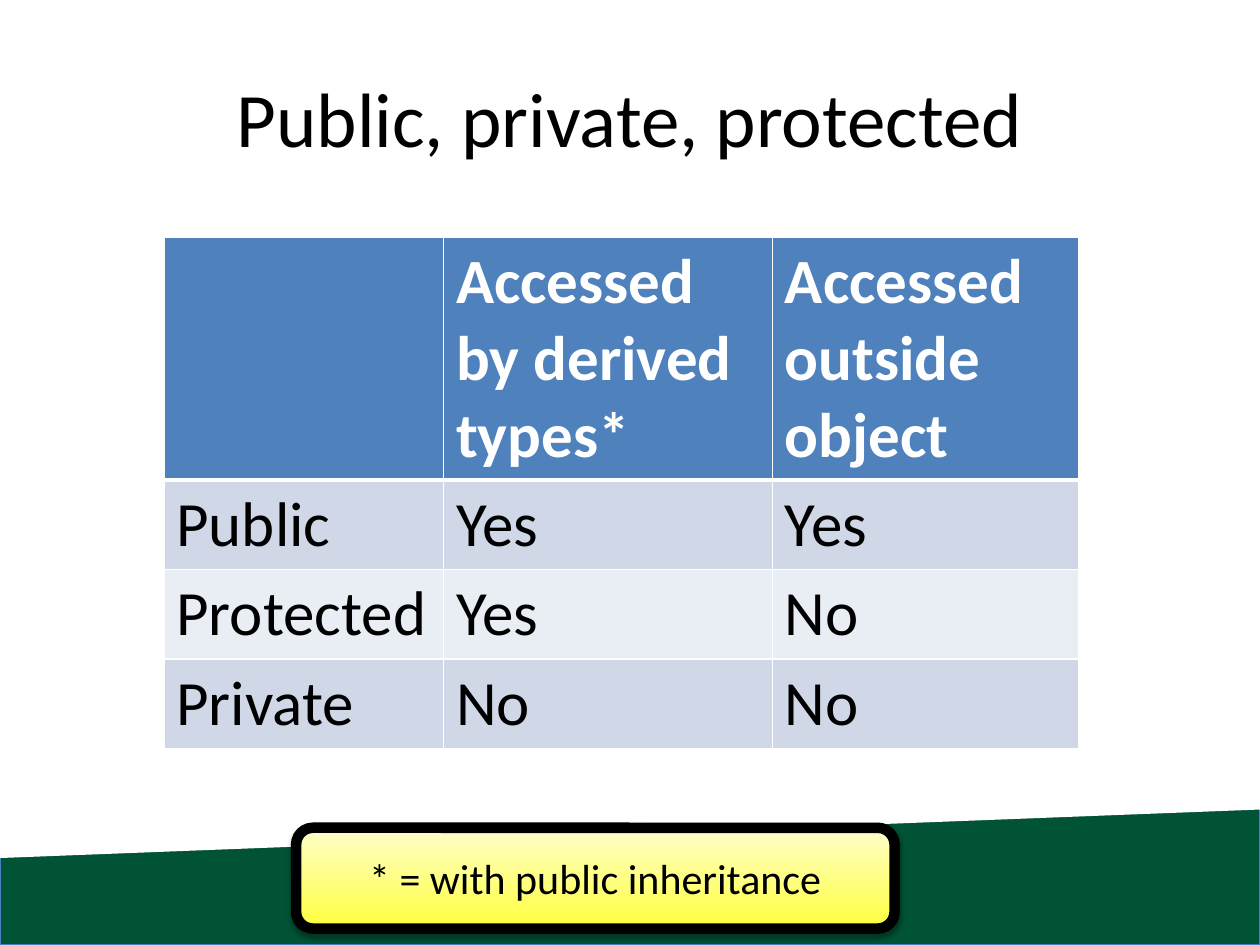
from dataclasses import dataclass
from typing import Any

from lxml.etree import SubElement
from pptx import Presentation
from pptx.dml.color import RGBColor
from pptx.enum.shapes import MSO_SHAPE as Preset
from pptx.enum.text import MSO_ANCHOR as Anchor, PP_ALIGN as Align
from pptx.oxml.ns import qn
from pptx.util import Inches, Pt

BLACK, WHITE = "000000", "FFFFFF"
GREEN, BLUE = "005334", "4F81BD"
BANDS = ["D0D8E8", "E9EDF4"]


def color(value):
    return RGBColor.from_string(value)


def add_color(parent, value):
    """Append a solid colour element and return it."""
    return SubElement(parent, qn("a:srgbClr"), val=value)


@dataclass
class SlideWriter:
    page: Any
    font: str = "Calibri"

    def text(self, frame, words, size, ink=BLACK, bold=False, align=Align.LEFT):
        frame.word_wrap = True
        para = frame.paragraphs[0]
        para.alignment = align
        span = para.add_run()
        span.text = words
        span.font.name = self.font
        span.font.size = Pt(size)
        span.font.bold = bold
        span.font.color.rgb = color(ink)

    def title(self, words, left, top, width, height):
        box = self.page.shapes.add_textbox(
            Inches(left), Inches(top), Inches(width), Inches(height))
        box.text_frame.vertical_anchor = Anchor.MIDDLE
        self.text(box.text_frame, words, 44, align=Align.CENTER)

    def shape(self, preset, left, top, width, height, fill=None, line=None, weight=0.75):
        shape = self.page.shapes.add_shape(
            preset, Inches(left), Inches(top), Inches(width), Inches(height))
        shape.shadow.inherit = False
        if fill:
            shape.fill.solid()
            shape.fill.fore_color.rgb = color(fill)
        if line:
            shape.line.color.rgb = color(line)
            shape.line.width = Pt(weight)
        else:
            shape.line.fill.background()
        return shape

    def soft_shadow(self, shape):
        effects = shape._element.spPr.find(qn("a:effectLst"))
        shadow = SubElement(
            effects, qn("a:outerShdw"), blurRad=str(Pt(3.1)), dist=str(Pt(1.8)),
            dir="5400000", rotWithShape="0")
        SubElement(add_color(shadow, BLACK), qn("a:alpha"), val="35000")

    def note(self, words, left, top, width, height):
        note = self.shape(Preset.ROUNDED_RECTANGLE, left, top, width, height,
                          line=BLACK, weight=6)
        note.fill.gradient()
        note.fill.gradient_angle = 90
        for stop, shade in zip(note.fill.gradient_stops, ["FFFF3E", "FFFFCA"]):
            stop.color.rgb = color(shade)
        self.soft_shadow(note)
        note.text_frame.vertical_anchor = Anchor.MIDDLE
        self.text(note.text_frame, words, 24, align=Align.CENTER)

    def borders(self, cell, top, bottom):
        props = cell._tc.get_or_add_tcPr()
        for side, weight in zip("LRTB", [1, 1, top, bottom]):
            line = SubElement(props, qn(f"a:ln{side}"), w=str(Pt(weight)))
            add_color(SubElement(line, qn("a:solidFill")), WHITE)

    def table(self, rows, left, top, widths, heights):
        table = self.page.shapes.add_table(
            len(rows), len(widths), Inches(left), Inches(top),
            Inches(sum(widths)), Inches(sum(heights))).table
        for column, width in zip(table.columns, widths):
            column.width = Inches(width)
        for r, (row, height) in enumerate(zip(rows, heights)):
            table.rows[r].height = Inches(height)
            header = r == 0
            for c, words in enumerate(row):
                cell = table.cell(r, c)
                self.borders(cell, 3 if r == 1 else 1, 3 if header else 1)
                cell.fill.solid()
                cell.fill.fore_color.rgb = color(BLUE if header else BANDS[(r - 1) % 2])
                if words:
                    self.text(cell.text_frame, words, 36,
                              WHITE if header else BLACK, header)


def main():
    deck = Presentation()
    deck.slide_width, deck.slide_height = Inches(10), Inches(7.5)
    writer = SlideWriter(deck.slides.add_slide(deck.slide_layouts[6]))

    ground = writer.shape(Preset.RECTANGLE, 0, 5.61, 10, 1.89, GREEN, "4B7EBC")
    writer.soft_shadow(ground)
    slope = writer.shape(Preset.PARALLELOGRAM, 3.84, 0.65, 2.32, 10, WHITE)
    slope.adjustments[0] = 0.166
    slope.rotation = 90
    slope._element.spPr.xfrm.set("flipH", "1")

    writer.title("Public, private, protected", 0.5, 0.3, 9, 1.25)
    writer.table(
        [["", "Accessed by derived types*", "Accessed outside object"],
         ["Public", "Yes", "Yes"],
         ["Protected", "Yes", "No"],
         ["Private", "No", "No"]],
        1.3, 1.88, [2.22, 2.61, 2.43], [1.93] + [0.71] * 3)
    writer.note("* = with public inheritance", 2.35, 6.57, 4.75, 0.8)

    deck.save("out.pptx")


if __name__ == "__main__":
    main()
